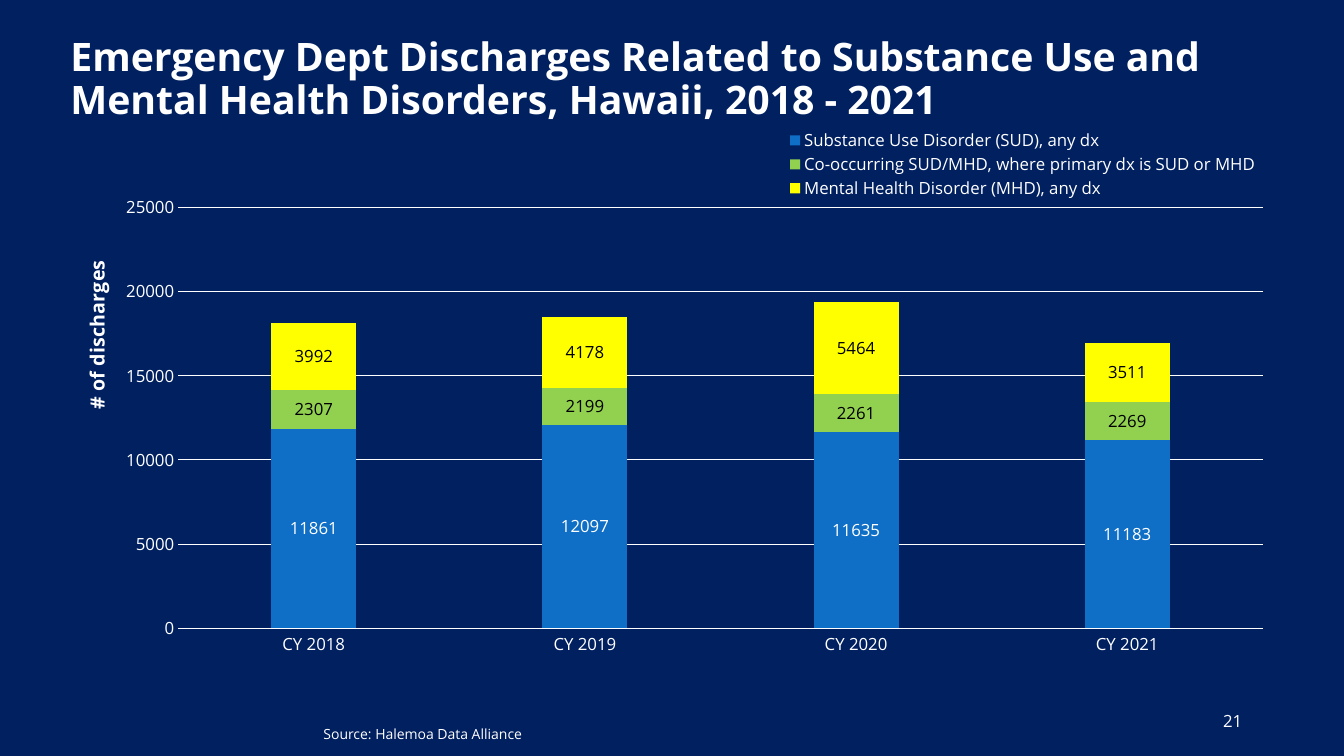
from dataclasses import dataclass

import pptx
import pptx.chart.data
import pptx.dml.color
import pptx.enum.chart
import pptx.enum.text
import pptx.oxml
import pptx.oxml.ns
import pptx.util
from pptx.util import Inches

FACE = "Open Sans"
WHITE = "FFFFFF"
BLACK = "000000"
NAVY = "002060"
YEARS = [f"CY {year}" for year in range(2018, 2022)]


@dataclass
class Label:
    text: str
    left: float
    top: float
    width: float
    height: float
    size: int
    bold: bool = False
    align: pptx.enum.text.PP_ALIGN = pptx.enum.text.PP_ALIGN.LEFT
    anchor: pptx.enum.text.MSO_ANCHOR = pptx.enum.text.MSO_ANCHOR.MIDDLE
    spacing: float = 1.0


@dataclass
class Series:
    name: str
    counts: tuple[int, ...]
    fill: str
    ink: str


LABELS = [
    Label("Emergency Dept Discharges Related to Substance Use and Mental Health "
          "Disorders, Hawaii, 2018 - 2021", 0.6, 0.07, 12.12, 1.45, 28,
          bold=True, spacing=0.9),
    Label("21", 9.42, 6.95, 3, 0.4, 12, align=pptx.enum.text.PP_ALIGN.RIGHT),
    Label("Source: Halemoa Data Alliance", 3.11, 7.15, 4.56, 0.27, 10,
          anchor=pptx.enum.text.MSO_ANCHOR.TOP),
]

SERIES = [
    Series("Substance Use Disorder (SUD), any dx",
           (11861, 12097, 11635, 11183), "0F6FC6", WHITE),
    Series("Co-occurring SUD/MHD, where primary dx is SUD or MHD",
           (2307, 2199, 2261, 2269), "92D050", BLACK),
    Series("Mental Health Disorder (MHD), any dx",
           (3992, 4178, 5464, 3511), "FFFF00", BLACK),
]


def paint(target, shade: str) -> None:
    target.solid()
    target.fore_color.rgb = pptx.dml.color.RGBColor.from_string(shade)


def style(font, size: int, shade: str = WHITE, bold: bool = False) -> None:
    font.name = FACE
    font.size = pptx.util.Pt(size)
    font.bold = bold
    paint(font.fill, shade)


def rule(line) -> None:
    line.width = pptx.util.Pt(0.75)
    paint(line.fill, WHITE)


def place(node, index: int, inner: bool = False, **spots: float) -> None:
    for old in node.findall(pptx.oxml.ns.qn("c:layout")):
        node.remove(old)
    target = '<c:layoutTarget val="inner"/>' if inner else ""
    modes = '<c:xMode val="edge"/><c:yMode val="edge"/>'
    sides = "".join(f'<c:{side} val="{value}"/>' for side, value in spots.items())
    node.insert(index, pptx.oxml.parse_xml(
        f'<c:layout {pptx.oxml.ns.nsdecls("c")}><c:manualLayout>'
        f"{target}{modes}{sides}</c:manualLayout></c:layout>"))


def add_label(slide, label: Label) -> None:
    box = slide.shapes.add_textbox(Inches(label.left), Inches(label.top),
                                   Inches(label.width), Inches(label.height))
    frame = box.text_frame
    frame.word_wrap = True
    frame.vertical_anchor = label.anchor
    frame.text = label.text
    line = frame.paragraphs[0]
    line.alignment = label.align
    line.line_spacing = label.spacing
    style(line.runs[0].font, label.size, bold=label.bold)


def add_bars(slide) -> None:
    kinds = pptx.enum.chart
    data = pptx.chart.data.CategoryChartData()
    data.categories = YEARS
    for item in SERIES:
        data.add_series(item.name, item.counts)
    chart = slide.shapes.add_chart(
        kinds.XL_CHART_TYPE.COLUMN_STACKED, Inches(0.65), Inches(1.16),
        Inches(12.02), Inches(5.54), data).chart
    chart.has_title = False
    style(chart.font, 10)

    plot = chart.plots[0]
    plot.gap_width = 219
    plot.overlap = 100
    plot.vary_by_categories = False
    for bars, item in zip(plot.series, SERIES):
        paint(bars.format.fill, item.fill)
        tags = bars.data_labels
        tags.show_value = True
        tags.position = kinds.XL_LABEL_POSITION.CENTER
        style(tags.font, 12, item.ink)

    base, scale = chart.category_axis, chart.value_axis
    for axis in (base, scale):
        axis.major_tick_mark = kinds.XL_TICK_MARK.NONE
        axis.minor_tick_mark = kinds.XL_TICK_MARK.NONE
        style(axis.tick_labels.font, 12)
    rule(base.format.line)
    scale.format.line.fill.background()
    scale.minimum_scale = 0
    scale.maximum_scale = 25000
    scale.major_unit = 5000
    scale.has_major_gridlines = True
    rule(scale.major_gridlines.format.line)

    scale.has_title = True
    frame = scale.axis_title.text_frame
    frame.text = "# of discharges"
    style(frame.paragraphs[0].runs[0].font, 14, bold=True)

    chart.has_legend = True
    legend = chart.legend
    legend.position = kinds.XL_LEGEND_POSITION.BOTTOM
    legend.include_in_layout = True
    style(legend.font, 12)

    root = chart.element if hasattr(chart, "element") else chart._chartSpace
    place(root.xpath(".//c:plotArea")[0], 0, inner=True,
          x=0.093, y=0.162, w=0.895, h=0.754)
    place(root.xpath(".//c:valAx/c:title")[0], 1, x=0.01, y=0.25)
    place(root.xpath(".//c:legend")[0], 1, x=0.59, y=0.02, w=0.4, h=0.13)


def main() -> None:
    deck = pptx.Presentation()
    deck.slide_width = Inches(13.33)
    deck.slide_height = Inches(7.5)
    slide = deck.slides.add_slide(deck.slide_layouts[6])
    paint(slide.background.fill, NAVY)
    add_bars(slide)
    for label in LABELS:
        add_label(slide, label)
    deck.save("out.pptx")


if __name__ == "__main__":
    main()
